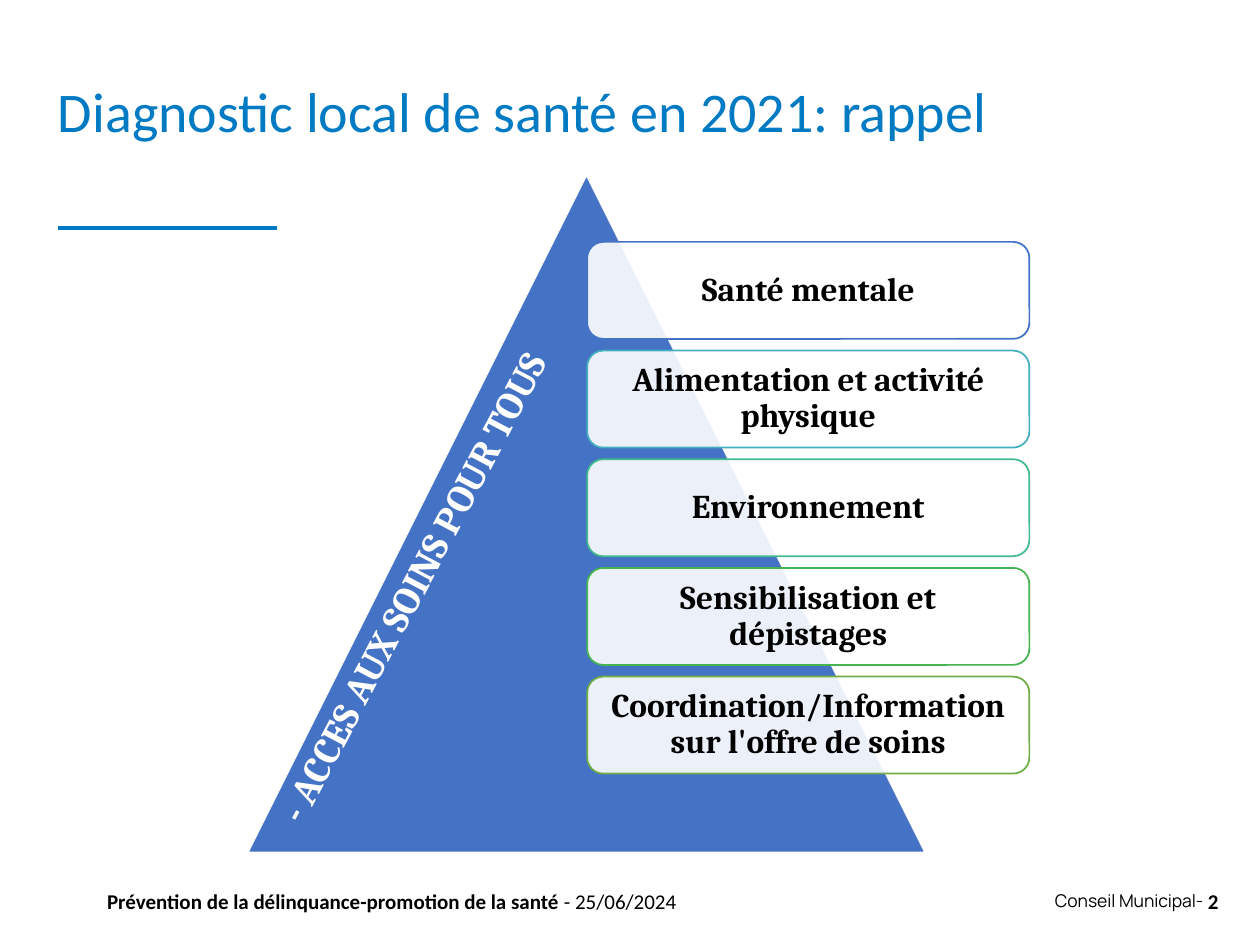
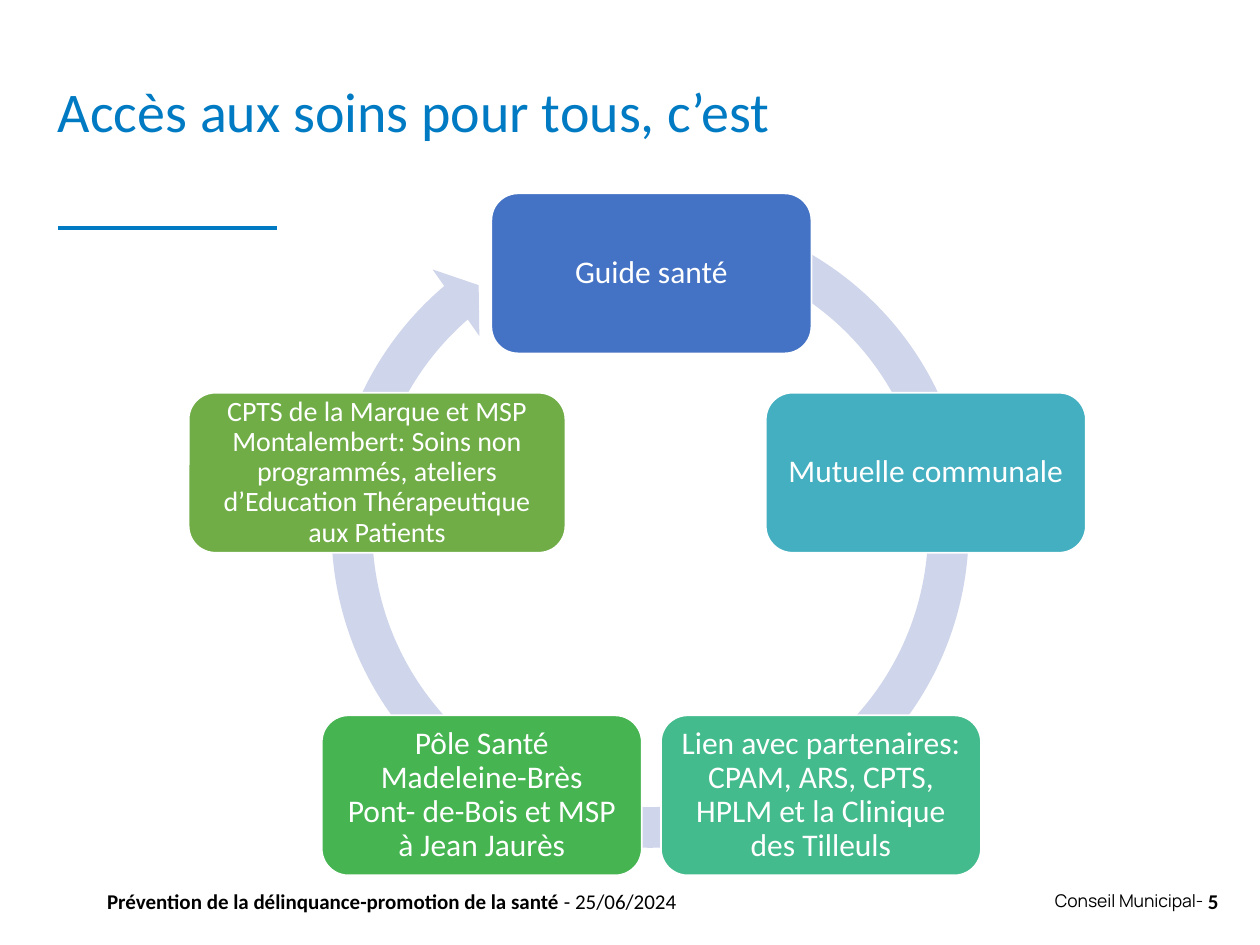
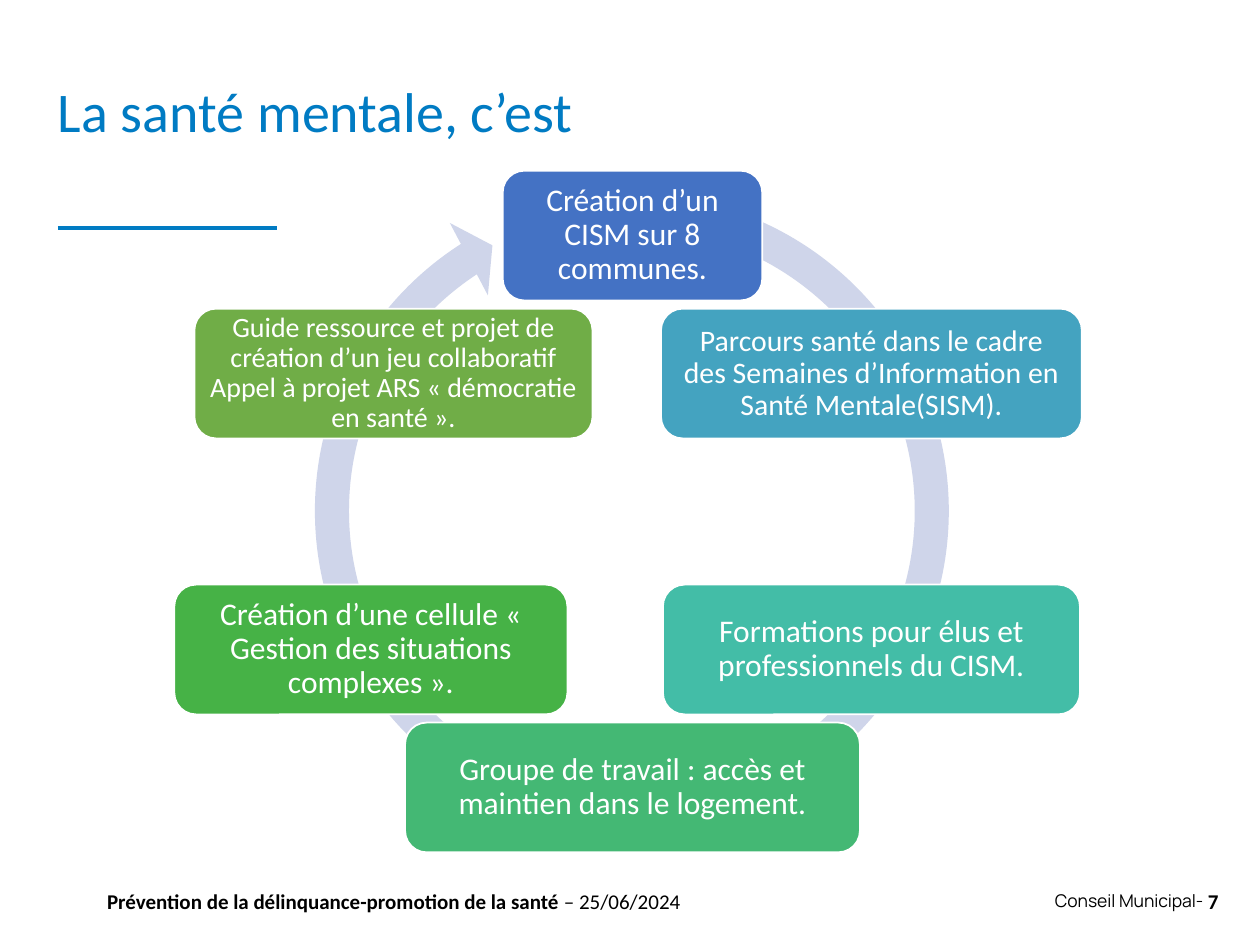
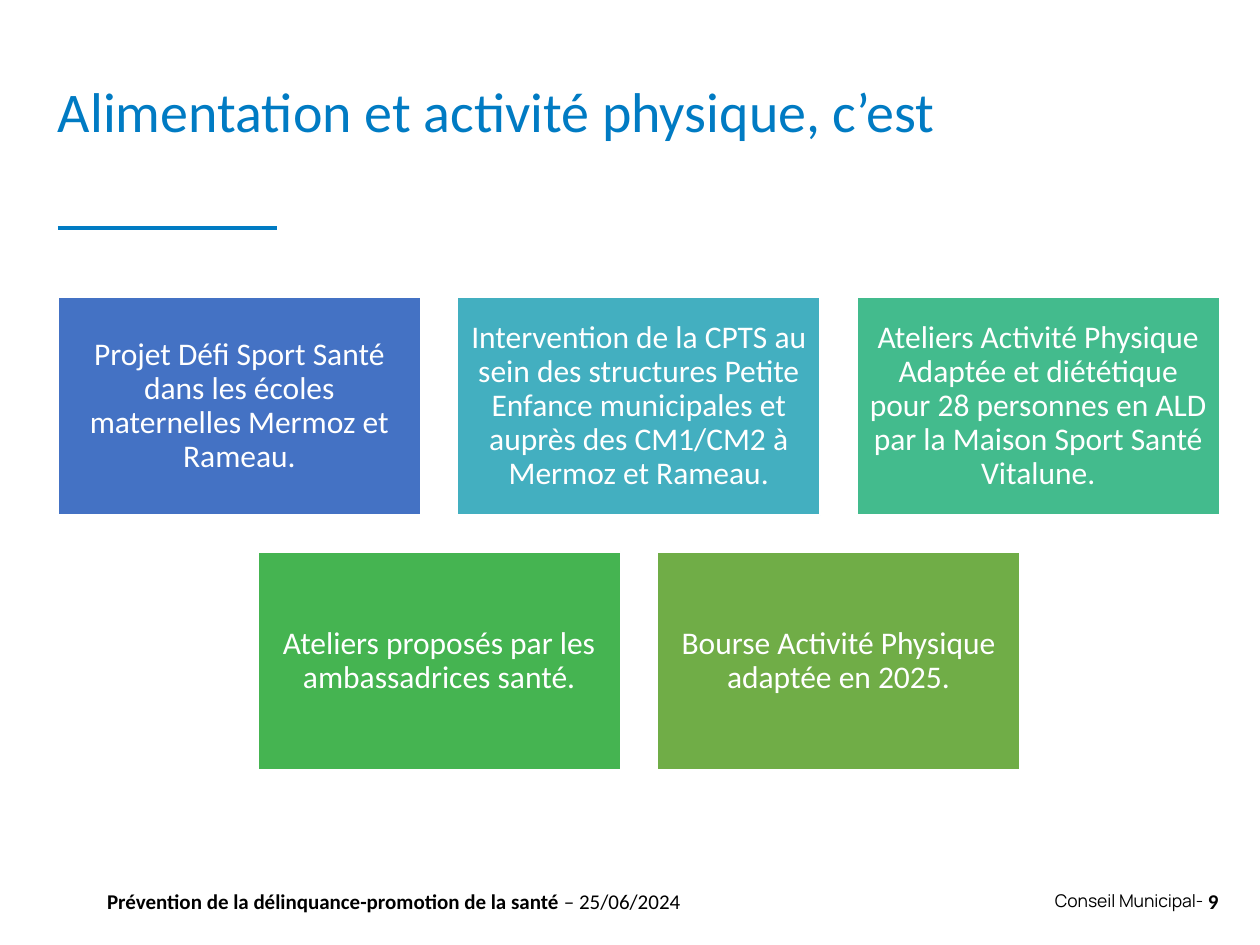
import math

import pptx
import pptx.dml.color
import pptx.enum.shapes
import pptx.enum.text
import pptx.oxml.ns
import pptx.util
from lxml import etree

Inches = pptx.util.Inches
Pt = pptx.util.Pt
SHAPES = pptx.enum.shapes.MSO_SHAPE
ANCHOR = pptx.enum.text.MSO_ANCHOR
ALIGN = pptx.enum.text.PP_ALIGN

TITLE_BLUE = "007BC3"
WHITE = "FFFFFF"
BLACK = "000000"
RING = "CFD5EA"
BLUE, GREEN = "4472C4", "70AD47"
FIVE_COLOURS = [BLUE, "43AFC0", "43BB8D", "45B451", GREEN]
SIX_COLOURS = [BLUE, "44A3C0", "43BDA7", "44B874", "46B246", GREEN]


def colour(value):
    """Turn a hex string into a colour."""
    return pptx.dml.color.RGBColor.from_string(value)


class Deck:
    """Hold the shared style and the current slide."""

    body_font = "Calibri"
    accent_font = "Cambria"
    footer_font = "Manrope"

    def __init__(self):
        """Start an empty 10 by 7.5 inch presentation."""
        self.presentation = pptx.Presentation()
        self.presentation.slide_width = Inches(10)
        self.presentation.slide_height = Inches(7.5)
        self.slide = None

    def new_slide(self, title, number, dash):
        """Add a slide with its title, rule and footer."""
        self.slide = self.presentation.slides.add_slide(self.presentation.slide_layouts[6])
        heading = self.text_box(title, 0.46, 0.7, 9.21, 0.48, size=32, hex_colour=TITLE_BLUE,
                                margins=(0, 0.05, 0.1, 0.05), anchor=ANCHOR.TOP)
        heading.text_frame.paragraphs[0].line_spacing = 0.7
        self.rule(0.46, 1.81, 2.2)
        right_margins = (0.1, 0.05, 0, 0.05)
        self.text_box("Conseil Municipal-", 3.31, 6.95, 6.24, 0.4, size=10,
                      font=self.footer_font, align=ALIGN.RIGHT, margins=right_margins)
        self.text_box(str(number), 9.45, 6.95, 0.22, 0.4, bold=True,
                      align=ALIGN.RIGHT, margins=right_margins)
        footer = self.text_box("Prévention de la délinquance-promotion de la santé", 0.85, 6.95,
                               5.24, 0.4, bold=True, margins=(0, 0.05, 0.1, 0.05))
        date = footer.text_frame.paragraphs[0].add_run()
        date.text = f" {dash} 25/06/2024"
        self.format_run(date, 12, self.body_font, BLACK, False)

    def format_run(self, run, size, font, hex_colour, bold):
        """Set the font of one run."""
        run.font.size = Pt(size)
        run.font.name = font
        run.font.bold = bold
        run.font.color.rgb = colour(hex_colour)

    def set_text(self, shape, text, size, font, hex_colour, bold, align, margins, anchor):
        """Put formatted text into a shape."""
        frame = shape.text_frame
        frame.word_wrap = True
        frame.vertical_anchor = anchor
        (frame.margin_left, frame.margin_top,
         frame.margin_right, frame.margin_bottom) = map(Inches, margins)
        frame.text = text
        for paragraph in frame.paragraphs:
            paragraph.alignment = align
            for run in paragraph.runs:
                self.format_run(run, size, font, hex_colour, bold)

    def text_box(self, text, left, top, width, height, size=12, font=body_font, hex_colour=BLACK,
                 bold=False, align=ALIGN.LEFT, margins=(0.1, 0.05, 0.1, 0.05),
                 anchor=ANCHOR.MIDDLE):
        """Add a text box."""
        box = self.slide.shapes.add_textbox(*map(Inches, (left, top, width, height)))
        self.set_text(box, text, size, font, hex_colour, bold, align, margins, anchor)
        return box

    def slanted_label(self, text, left, top, width, height, rotation):
        """Add a rotated label that reads upwards."""
        label = self.text_box(text, left, top, width, height, size=22, font=self.accent_font,
                              hex_colour=WHITE, bold=True, align=ALIGN.CENTER, anchor=ANCHOR.TOP)
        label.text_frame._txBody.bodyPr.set("vert", "vert270")
        label.rotation = rotation

    def rule(self, left, top, right):
        """Add the short line under the title."""
        line = self.slide.shapes.add_connector(
            pptx.enum.shapes.MSO_CONNECTOR.STRAIGHT, *map(Inches, (left, top, right, top)))
        line.line.color.rgb = colour(TITLE_BLUE)
        line.line.width = Pt(2.25)
        etree.SubElement(line._element.spPr, pptx.oxml.ns.qn("a:effectLst"))

    def shape(self, kind, left, top, width, height, fill, line=None, line_width=1):
        """Add a preset shape."""
        shape = self.slide.shapes.add_shape(kind, *map(Inches, (left, top, width, height)))
        shape.shadow.inherit = False
        shape.fill.solid()
        shape.fill.fore_color.rgb = colour(fill)
        if line:
            shape.line.color.rgb = colour(line)
            shape.line.width = Pt(line_width)
        else:
            shape.line.fill.background()
        return shape

    def card(self, kind, text, left, top, width, height, fill, line=WHITE, size=18,
             font=body_font, text_colour=WHITE, bold=False, margin=0.07):
        """Add a shape with centred text."""
        card = self.shape(kind, left, top, width, height, fill, line)
        self.set_text(card, text, size, font, text_colour, bold, ALIGN.CENTER,
                      [margin] * 4, ANCHOR.MIDDLE)
        card.text_frame.paragraphs[0].line_spacing = 0.9
        return card

    def priority(self, text, top, line):
        """Add a translucent white card of the pyramid."""
        card = self.card(SHAPES.ROUNDED_RECTANGLE, text, 4.66, top, 3.51, 0.77, WHITE, line, 19,
                         self.accent_font, BLACK, True, 0.08)
        fill = card._element.spPr.find(pptx.oxml.ns.qn("a:solidFill"))
        etree.SubElement(fill[0], pptx.oxml.ns.qn("a:alpha"), val="90000")

    def ring(self, left, top, side, adjustments):
        """Add the circular arrow behind a cycle."""
        arrow = self.shape(SHAPES.CIRCULAR_ARROW, left, top, side, side, RING)
        for index, value in enumerate(adjustments):
            arrow.adjustments[index] = value

    def cycle(self, nodes, colours, centre_x, centre_y, radius, height):
        """Place (text, width, size, shift) nodes clockwise at equal angles."""
        for index, ((text, width, size, shift), fill) in enumerate(zip(nodes, colours)):
            angle = 2 * math.pi * index / len(nodes)
            left = centre_x + radius * math.sin(angle) - width / 2 + shift
            top = centre_y - radius * math.cos(angle) - height / 2
            self.card(SHAPES.ROUNDED_RECTANGLE, text, left, top, width, height, fill, size=size)

    def centred_rows(self, rows, colours, centre_x, top, width, height, gap):
        """Place rows of rectangles, each row centred."""
        fills = iter(colours)
        for row, texts in enumerate(rows):
            start = centre_x - (len(texts) * (width + gap) - gap) / 2
            for column, text in enumerate(texts):
                self.card(SHAPES.RECTANGLE, text, start + column * (width + gap),
                          top + row * (height + gap), width, height, next(fills))


def main():
    """Build the four slides."""
    deck = Deck()

    deck.new_slide("Diagnostic local de santé en 2021: rappel", 2, "-")
    deck.shape(SHAPES.ISOSCELES_TRIANGLE, 1.96, 1.38, 5.39, 5.39, BLUE, WHITE, 1.5)
    priorities = [
        "Santé mentale",
        "Alimentation et activité physique",
        "Environnement",
        "Sensibilisation et dépistages",
        "Coordination/Information sur l'offre de soins",
    ]
    for index, (text, line) in enumerate(zip(priorities, FIVE_COLOURS)):
        deck.priority(text, 1.92 + index * 3.45 / 4, line)
    deck.slanted_label("- ACCES AUX SOINS POUR TOUS", 3.03, 2.07, 0.57, 5.22, 27.9)

    deck.new_slide("Accès aux soins pour tous, c’est", 5, "-")
    deck.ring(2.47, 1.51, 5.38, (0.06, 3.31, 137.63, 173.94, 0.06))
    care_access = [
        ("Guide santé", 2.54, 18, 0),
        ("Mutuelle communale", 2.54, 18, 0),
        ("Lien avec partenaires: CPAM, ARS, CPTS, HPLM et la Clinique des Tilleuls", 2.54, 18, 0),
        ("Pôle Santé Madeleine-Brès\vPont- de-Bois et MSP à Jean Jaurès", 2.54, 18, 0),
        ("CPTS de la Marque et MSP Montalembert: Soins non programmés, ateliers "
         "d’Education Thérapeutique aux Patients", 2.99, 16, 0),
    ]
    deck.cycle(care_access, FIVE_COLOURS, 5.17, 4.46, 2.29, 1.27)

    deck.new_slide("La santé mentale, c’est", 7, "–")
    deck.ring(2.31, 1.35, 5.41, (0.05, 3.13, 142.25, 171.29, 0.06))
    mental_health = [
        ("Création d’un CISM sur 8 communes.", 2.06, 18, 0),
        ("Parcours santé dans le cadre des Semaines d’Information en Santé Mentale(SISM).",
         3.34, 17, 0),
        ("Formations pour élus et professionnels du CISM.", 3.31, 18, 0),
        ("Groupe de travail : accès et maintien dans le logement.", 3.61, 18, 0),
        ("Création d’une cellule « Gestion des situations complexes ».", 3.12, 18, -0.18),
        ("Guide ressource et projet de création d’un jeu collaboratif Appel à projet ARS "
         "« démocratie en santé ».", 3.16, 16, 0),
    ]
    deck.cycle(mental_health, SIX_COLOURS, 5.02, 4.06, 2.19, 1.03)

    deck.new_slide("Alimentation et activité physique, c’est", 9, "–")
    activities = [
        ["Projet Défi Sport Santé dans les écoles maternelles Mermoz et Rameau.",
         "Intervention de la CPTS au sein des structures Petite Enfance municipales et auprès "
         "des CM1/CM2 à Mermoz et Rameau.",
         "Ateliers Activité Physique Adaptée et diététique pour 28 personnes en ALD par la "
         "Maison Sport Santé Vitalune."],
        ["Ateliers proposés par les ambassadrices santé.",
         "Bourse Activité Physique adaptée en 2025."],
    ]
    deck.centred_rows(activities, FIVE_COLOURS, 5.07, 2.36, 2.88, 1.73, 0.29)

    deck.presentation.save("out.pptx")


if __name__ == "__main__":
    main()
